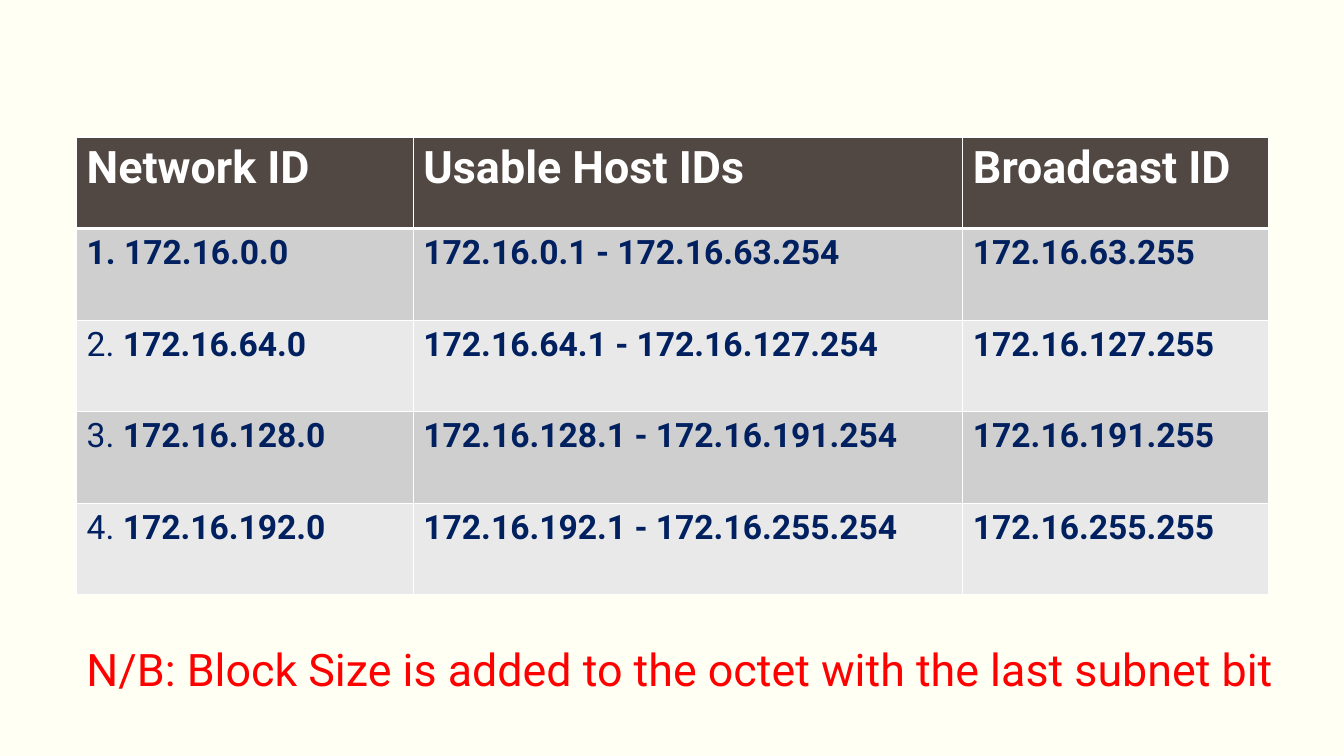
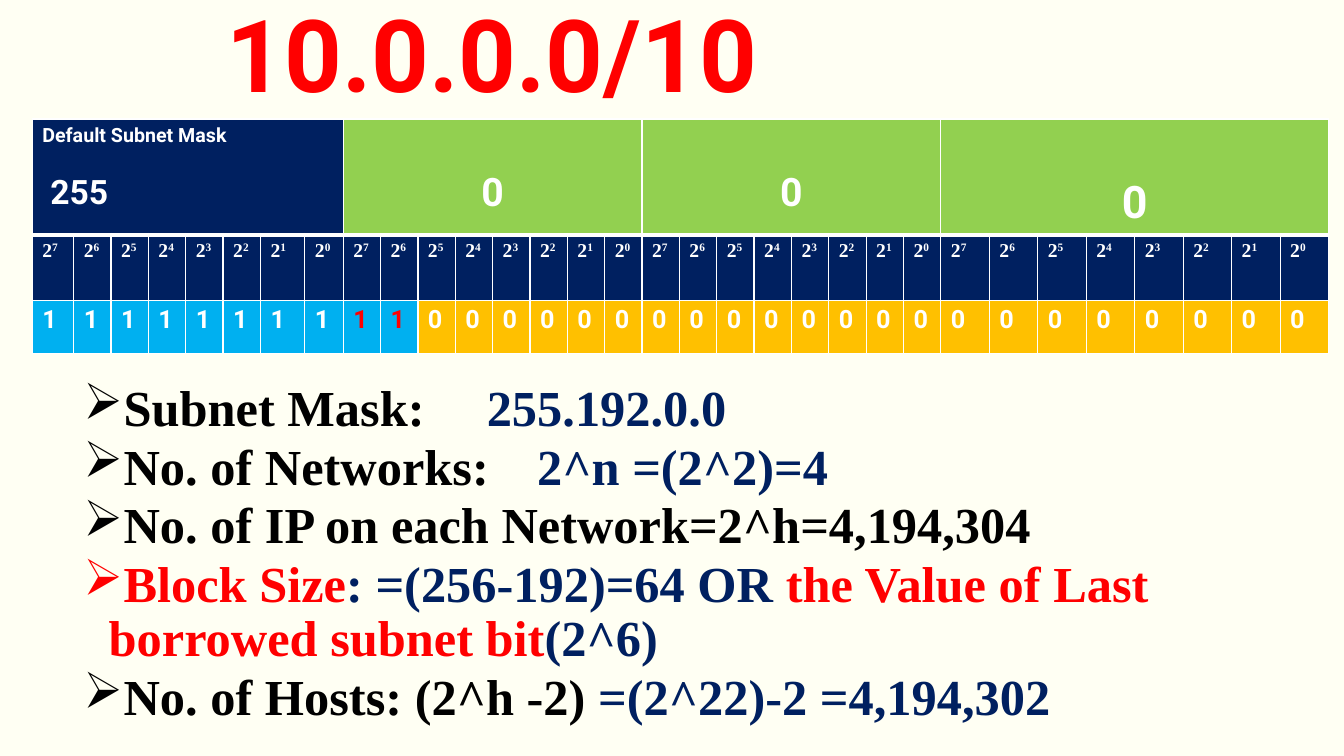
from lxml.etree import SubElement
from pptx import Presentation
from pptx.dml.color import RGBColor
from pptx.enum.text import MSO_ANCHOR, MSO_AUTO_SIZE, PP_ALIGN
from pptx.oxml.ns import qn
from pptx.util import Inches, Pt

SANS, SERIF = "Roboto", "Times New Roman"
PAPER, WHITE, BLACK, RED, NAVY = "FFFFF3", "FFFFFF", "000000", "FF0000", "002060"
BROWN, DARK_BAND, LIGHT_BAND = "514843", "D0CFCF", "E9E9E9"
GREEN, SKY, AMBER = "92D050", "00B0F0", "FFC000"
TITLE_ONLY, BLANK = 5, 6
BITS = 8


def rgb(colour):
    return RGBColor.from_string(colour)


def add_span(para, text, size, colour, face=SANS, bold=True):
    span = para.add_run()
    span.text = text
    font = span.font
    font.name, font.size, font.bold = face, Pt(size), bold
    font.color.rgb = rgb(colour)
    return span


def move(shape, box):
    shape.left, shape.top, shape.width, shape.height = map(Inches, box)


def add_textbox(page, box):
    frame = page.shapes.add_textbox(*map(Inches, box)).text_frame
    frame.word_wrap = True
    return frame


def add_borders(cell, top, bottom):
    """Draw white cell borders; top and bottom are widths in points."""
    properties = cell._tc.get_or_add_tcPr()
    for side, width in (("L", 1), ("R", 1), ("T", top), ("B", bottom)):
        line = SubElement(properties, qn(f"a:ln{side}"), w=str(Pt(width)))
        SubElement(SubElement(line, qn("a:solidFill")), qn("a:srgbClr"), val=WHITE)


def add_grid(page, box, columns, rows, fills):
    """Add a table whose columns and rows share the box by weight."""
    left, top, width, height = box
    table = page.shapes.add_table(len(rows), len(columns), *map(Inches, box)).table
    table.horz_banding = False
    for column, weight in zip(table.columns, columns):
        column.width = Inches(width * weight / sum(columns))
    for row, weight in zip(table.rows, rows):
        row.height = Inches(height * weight / sum(rows))
    for r, row_fills in enumerate(fills):
        for c, colour in enumerate(row_fills):
            cell = table.cell(r, c)
            add_borders(cell, 3 if r == 1 else 1, 3 if r == 0 else 1)
            cell.fill.solid()
            cell.fill.fore_color.rgb = rgb(colour)
    return table


def add_subnet_table(page, box):
    headers = ("Network ID", "Usable Host IDs", "Broadcast ID")
    starts = range(0, 256, 64)
    bands = [BROWN] + [DARK_BAND, LIGHT_BAND] * 2
    table = add_grid(page, box, (3.34, 5.45, 3.03), [1] * 5,
                     [[band] * 3 for band in bands])
    for c, header in enumerate(headers):
        add_span(table.cell(0, c).text_frame.paragraphs[0], header, 32, WHITE)
    for number, start in enumerate(starts, 1):
        end = start + 63
        network, hosts, broadcast = (
            table.cell(number, c).text_frame.paragraphs[0] for c in range(3))
        add_span(network, f"{number}. ", 24, NAVY, bold=number == 1)
        add_span(network, f"172.16.{start}.0", 24, NAVY)
        add_span(hosts, f"172.16.{start}.1 - 172.16.{end}.254", 24, NAVY)
        add_span(broadcast, f"172.16.{end}.255", 24, NAVY)


def add_mask_label(cell):
    frame = cell.text_frame
    add_span(frame.paragraphs[0], "Default Subnet Mask", 14, WHITE)
    value = frame.add_paragraph()
    value._p.get_or_add_pPr().set("marL", str(Inches(0.08)))
    value.space_before = Pt(18.75)
    add_span(value, "255", 24, WHITE)


def add_bit_table(page, box, prefix, default_prefix):
    octet = [0.37] * BITS
    columns = [0.41] + [0.37] * 5 + [0.44, 0.38] + octet * 2 + [0.48] * BITS
    total = len(columns)
    fills = [[NAVY] * BITS + [GREEN] * (total - BITS),
             [NAVY] * total,
             [SKY] * prefix + [AMBER] * (total - prefix)]
    table = add_grid(page, box, columns, (1.15, 0.65, 0.53), fills)

    for start in range(0, total, BITS):
        table.cell(0, start).merge(table.cell(0, start + BITS - 1))
    add_mask_label(table.cell(0, 0))
    for start, size, drop in ((8, 28, 0.51), (16, 28, 0.51), (24, 32, 0.57)):
        cell = table.cell(0, start)
        cell.margin_top = Inches(drop)
        para = cell.text_frame.paragraphs[0]
        para.alignment = PP_ALIGN.CENTER
        add_span(para, "0", size, WHITE)

    for bit in range(total):
        power = table.cell(1, bit).text_frame.paragraphs[0]
        add_span(power, "2", 14, WHITE, SERIF)
        exponent = add_span(power, str(BITS - 1 - bit % BITS), 14, WHITE, SERIF)
        exponent._r.get_or_add_rPr().set("baseline", "30000")
        borrowed = default_prefix <= bit < prefix
        add_span(table.cell(2, bit).text_frame.paragraphs[0],
                 "1" if bit < prefix else "0", 18, RED if borrowed else WHITE)


def add_bullets(page, box, items):
    frame = add_textbox(page, box)
    for index, spans in enumerate(items):
        para = frame.add_paragraph() if index else frame.paragraphs[0]
        properties = para._p.get_or_add_pPr()
        properties.set("marL", str(Inches(0.25)))
        properties.set("indent", str(-Inches(0.25)))
        SubElement(properties, qn("a:buChar"), char="➢")
        para.line_spacing = 0.9
        para.space_before = Pt(3 if index else 0)
        for text, colour in spans:
            add_span(para, text, 36, colour, SERIF)


def add_title(page, box, text):
    title = page.shapes.title
    move(title, box)
    frame = title.text_frame
    frame.auto_size = MSO_AUTO_SIZE.NONE
    frame.vertical_anchor = MSO_ANCHOR.TOP
    para = frame.paragraphs[0]
    para.alignment = PP_ALIGN.LEFT
    add_span(para, text, 72, RED)


def build_subnet_page(deck):
    page = deck.slides.add_slide(deck.slide_layouts[BLANK])
    add_subnet_table(page, (0.76, 1.36, 11.82, 4.54))
    note = add_textbox(page, (0.76, 6.32, 12.03, 1.18))
    add_span(note.paragraphs[0],
             "N/B: Block Size is added to the octet with the last subnet bit",
             32, RED, bold=False)


def build_mask_page(deck):
    page = deck.slides.add_slide(deck.slide_layouts[TITLE_ONLY])
    add_title(page, (2.15, -0.13, 8.16, 1.31), "10.0.0.0/10")
    add_bit_table(page, (0.32, 1.18, 12.86, 2.33), prefix=10, default_prefix=8)
    add_bullets(page, (0.73, 3.75, 12.2, 3.41), [
        [("Subnet Mask:", BLACK), ("\t\t255.192.0.0", NAVY)],
        [("No. of Networks:", BLACK), ("\t2^n =(2^2)=4", NAVY)],
        [("No. of IP on each Network=2^h=4,194,304", BLACK)],
        [("Block Size", RED), (": =(256-192)=64 OR ", NAVY),
         ("the Value of Last borrowed subnet bit", RED), ("(2^6)", NAVY)],
        [("No. of Hosts: (2^h -2) ", BLACK), ("=(2^22)-2 =4,194,302", NAVY)],
    ])


def main():
    deck = Presentation()
    deck.slide_width, deck.slide_height = Inches(13.33), Inches(7.5)
    paper = deck.slide_master.background.fill
    paper.solid()
    paper.fore_color.rgb = rgb(PAPER)
    build_subnet_page(deck)
    build_mask_page(deck)
    deck.save("out.pptx")


if __name__ == "__main__":
    main()
